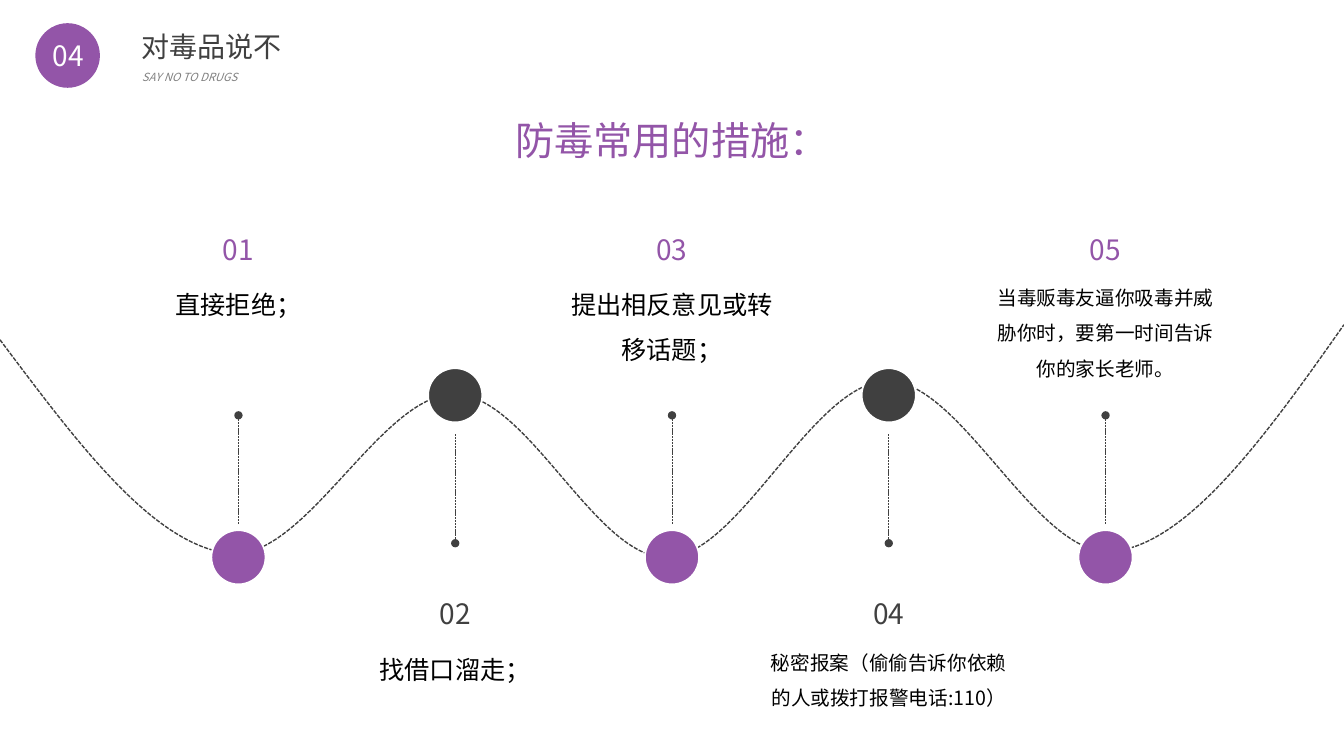
from dataclasses import dataclass

from lxml.etree import SubElement, Element
from pptx import Presentation
from pptx.dml.color import RGBColor
from pptx.enum.dml import MSO_LINE
from pptx.enum.shapes import MSO_CONNECTOR, MSO_SHAPE
from pptx.enum.text import MSO_ANCHOR, MSO_AUTO_SIZE, PP_ALIGN
from pptx.oxml.ns import qn
from pptx.util import Inches, Pt

FONT = "Noto Sans CJK SC"
PURPLE, DARK, GREY, WHITE, BLACK = "9355A8", "404040", "808080", "FFFFFF", "000000"
WIDTH, HEIGHT = Inches(13.33), Inches(7.5)
COLS, ROWS = 62, 35
FIRST_STOP, STOP_STEP, DOT = 11, 10, 2.5
CURVE_UNITS = 100
WAVE_START = (0, 15.73)
WAVE = [
    ((3.53, 20.44), (7.02, 25.2), (10.56, 25.62)),
    ((14.05, 26.04), (17.58, 18.2), (20.98, 18.25)),
    ((24.37, 18.29), (27.49, 25.9), (30.79, 25.81)),
    ((34.14, 25.71), (37.49, 17.69), (40.93, 17.64)),
    ((44.37, 17.59), (47.86, 25.95), (51.4, 25.53)),
    ((54.88, 25.11), (58.47, 20.07), (62, 15.03)),
]


@dataclass
class Side:
    color: str
    dot_row: float
    line_top: float
    line_bottom: float
    oval_end: str
    number_row: float
    text_row: float


@dataclass
class Stop:
    text: str
    size: int
    rows: float
    side: Side
    cols: float = 10.98


UPPER = Side(PURPLE, 25.8, 19.23, 24.27, "headEnd", 10.22, 12.46)
LOWER = Side(DARK, 18.3, 20.11, 25.15, "tailEnd", 27.07, 29.35)
STOPS = [
    Stop("直接拒绝；", 18, 2.57, UPPER),
    Stop("找借口溜走；", 18, 2.57, LOWER),
    Stop("提出相反意见或转移话题；", 18, 4.67, UPPER),
    Stop("秘密报案（偷偷告诉你依赖的人或拨打报警电话:110）", 14, 3.73, LOWER, 11.9),
    Stop("当毒贩毒友逼你吸毒并威胁你时，要第一时间告诉你的家长老师。", 14, 5.37, UPPER),
]


def rgb(color: str) -> RGBColor:
    return RGBColor.from_string(color)


def col(n: float) -> int:
    return round(WIDTH * n / COLS)


def row(n: float) -> int:
    return round(HEIGHT * n / ROWS)


def write(tf, text: str, size: int, color: str, align=PP_ALIGN.CENTER,
          spacing: float = 1, italic: bool = False, wrap: bool = True) -> None:
    tf.text = text
    tf.word_wrap = wrap
    tf.auto_size = MSO_AUTO_SIZE.SHAPE_TO_FIT_TEXT
    p = tf.paragraphs[0]
    p.alignment, p.line_spacing = align, spacing
    r = p.runs[0]
    r.font.name, r.font.size, r.font.italic = FONT, Pt(size), italic
    r.font.color.rgb = rgb(color)
    SubElement(r.font._element, qn("a:ea"), typeface=FONT)


def add_text(shapes, x: float, y: float, w: float, h: float,
             text: str, size: int, color: str, **style) -> None:
    tb = shapes.add_textbox(col(x), row(y), col(w), row(h))
    write(tb.text_frame, text, size, color, **style)


def add_circle(shapes, x: float, y: float, d: float, color: str):
    sp = shapes.add_shape(MSO_SHAPE.OVAL, col(x - d / 2), row(y) - col(d / 2), col(d), col(d))
    sp.shadow.inherit = False
    sp.fill.solid()
    sp.fill.fore_color.rgb = rgb(color)
    sp.line.fill.background()
    return sp


def dash(line, width: float) -> None:
    line.color.rgb = rgb(DARK)
    line.width = Pt(width)
    line.dash_style = MSO_LINE.SQUARE_DOT


def add_wave(shapes) -> None:
    start_x, start_y = (n * CURVE_UNITS for n in WAVE_START)
    scale = WIDTH / COLS / CURVE_UNITS, HEIGHT / ROWS / CURVE_UNITS
    fb = shapes.build_freeform(start_x, start_y, scale=scale)
    ends = [end for _, _, end in WAVE]
    fb.add_line_segments([(x * CURVE_UNITS, y * CURVE_UNITS) for x, y in ends], close=False)
    sp = fb.convert_to_shape()
    sp.shadow.inherit = False
    sp.fill.background()
    dash(sp.line, 1)
    top = min(y for _, y in [WAVE_START, *ends])
    for segment, curve in zip(list(sp._element.iter(qn("a:lnTo"))), WAVE):
        segment.tag = qn("a:cubicBezTo")
        for i, (x, y) in enumerate(curve[:2]):
            pt = Element(qn("a:pt"), x=str(round(x * CURVE_UNITS)),
                         y=str(round((y - top) * CURVE_UNITS)))
            segment.insert(i, pt)


def add_stop(shapes, index: int, stop: Stop) -> None:
    side, x = stop.side, FIRST_STOP + STOP_STEP * index
    group = shapes.add_group_shape().shapes
    dot = add_circle(group, x, side.dot_row, DOT, side.color)
    dot.line.color.rgb = rgb(WHITE)
    dot.line.width = Pt(1.25)
    stem = group.add_connector(MSO_CONNECTOR.STRAIGHT, col(x), row(side.line_top),
                               col(x), row(side.line_bottom))
    dash(stem.line, 0.5)
    props = stem._element.spPr
    SubElement(props.find(qn("a:ln")), qn(f"a:{side.oval_end}"), type="oval")
    SubElement(props, qn("a:effectLst"))
    add_text(group, x - 4.58, side.number_row, 9.16, 2.33,
             f"{index + 1:02}", 20, side.color, spacing=1.2)
    add_text(group, x - stop.cols / 2, side.text_row, stop.cols, stop.rows,
             stop.text, stop.size, BLACK, spacing=1.5)


def add_header(shapes) -> None:
    group = shapes.add_group_shape().shapes
    add_circle(group, 3.12, 2.57, 2.98, PURPLE)
    add_text(group, 1.58, 1.54, 3.12, 2, "04", 20, WHITE)
    add_text(group, 6.05, 1.12, 7.81, 2, "对毒品说不", 20, DARK, align=PP_ALIGN.JUSTIFY)
    add_text(group, 6.09, 3.03, 11.81, 1.07, "SAY NO TO DRUGS", 8, GREY,
             align=PP_ALIGN.JUSTIFY, italic=True)


def add_title(title) -> None:
    title.left, title.top, title.width, title.height = col(23.3), row(5.13), col(15.4), row(2.66)
    write(title.text_frame, "防毒常用的措施：", 28, PURPLE, wrap=False)
    title.text_frame.vertical_anchor = MSO_ANCHOR.TOP


def main() -> None:
    prs = Presentation()
    prs.slide_width, prs.slide_height = WIDTH, HEIGHT
    s = prs.slides.add_slide(prs.slide_layouts[5])
    add_header(s.shapes)
    add_title(s.shapes.title)
    add_wave(s.shapes)
    for index, stop in enumerate(STOPS):
        add_stop(s.shapes, index, stop)
    prs.save("out.pptx")


if __name__ == "__main__":
    main()
